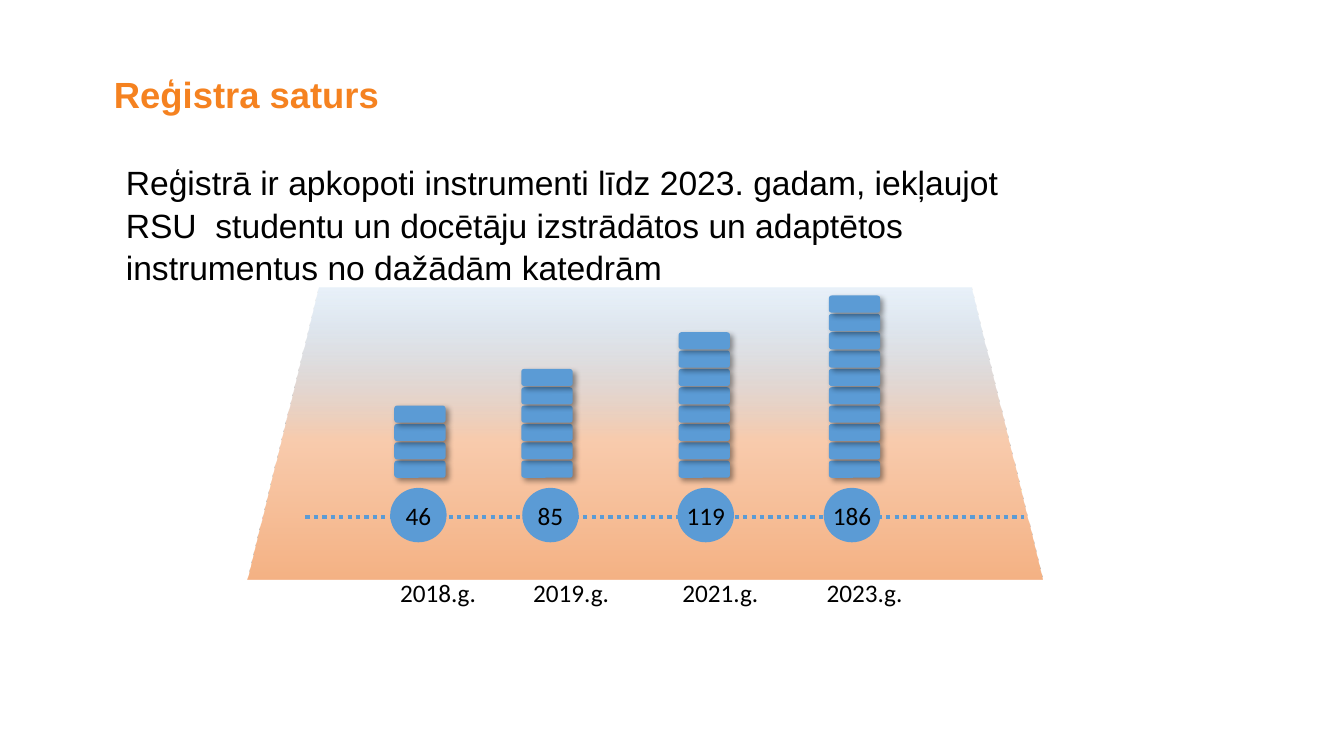
from dataclasses import dataclass

from lxml.etree import SubElement
from pptx import Presentation
from pptx.dml.color import RGBColor
from pptx.enum.dml import MSO_LINE
from pptx.enum.shapes import MSO_CONNECTOR, MSO_SHAPE
from pptx.enum.text import MSO_ANCHOR, PP_ALIGN
from pptx.oxml import parse_xml
from pptx.oxml.ns import nsdecls, qn
from pptx.util import Inches, Pt

ORANGE = RGBColor(0xF5, 0x82, 0x20)
BLUE = RGBColor(0x5B, 0x9B, 0xD5)
BLACK = RGBColor(0x00, 0x00, 0x00)
DEEP_PEACH = RGBColor(0xF4, 0xB1, 0x83)
PEACH = RGBColor(0xF8, 0xCB, 0xAD)
SKY = RGBColor(0x9D, 0xC3, 0xE6)

CELL = Inches(0.1)
COIN_PITCH = 1.82


@dataclass
class Box:
    left: float
    top: float
    width: float
    height: float

    def inner(self, left, top, width, height):
        return Box(self.left + left, self.top + top, width, height)

    def lengths(self):
        return [round(cells * CELL) for cells in (self.left, self.top, self.width, self.height)]


@dataclass
class Period:
    year: str
    total: str
    coins: int
    circle_left: float
    coin_left: float
    year_left: float


PERIODS = [
    Period("2018.g.", "46", 4, 14.2, 14.6, 14.2),
    Period("2019.g.", "85", 6, 27.3, 27.2, 27.4),
    Period("2021.g.", "119", 8, 42.7, 42.8, 42.2),
    Period("2023.g.", "186", 10, 57.2, 57.7, 56.5),
]


def write(shape, text, font="Arial", size=18, color=BLACK, bold=False, align=PP_ALIGN.LEFT,
          anchor=MSO_ANCHOR.TOP, spacing=1.0, margin=None, wrap=True, tabs=()):
    frame = shape.text_frame
    frame.word_wrap = wrap
    frame.vertical_anchor = anchor
    if margin is not None:
        frame.margin_left = frame.margin_right = margin
        frame.margin_top = frame.margin_bottom = margin
    paragraph = frame.paragraphs[0]
    paragraph.alignment = align
    paragraph.line_spacing = spacing
    if tabs:
        tab_list = SubElement(paragraph._p.get_or_add_pPr(), qn("a:tabLst"))
        for tab in tabs:
            SubElement(tab_list, qn("a:tab"), pos=str(round(tab * CELL)), algn="l")
    run = paragraph.add_run()
    run.text = text
    run.font.name = font
    run.font.size = Pt(size)
    run.font.bold = bold
    run.font.color.rgb = color


def add_plain_shape(slide, kind, box, fill=BLUE):
    shape = slide.shapes.add_shape(kind, *box.lengths())
    shape.shadow.inherit = False
    shape.fill.solid()
    shape.fill.fore_color.rgb = fill
    shape.line.fill.background()
    return shape


def add_title(slide, box):
    title = slide.shapes.title
    title.left, title.top, title.width, title.height = box.lengths()
    write(title, "Reģistra saturs", size=26, color=ORANGE, bold=True, spacing=0.9, margin=0)


def add_summary(slide, box):
    write(slide.shapes.add_textbox(*box.lengths()),
          "Reģistrā ir apkopoti instrumenti līdz 2023. gadam, iekļaujot RSU  studentu un docētāju "
          "izstrādātos un adaptētos instrumentus no dažādām katedrām", size=24, spacing=1.05)


def add_backdrop(slide, box):
    backdrop = add_plain_shape(slide, MSO_SHAPE.TRAPEZOID, box, PEACH)
    backdrop.adjustments[0] = 0.245
    solid = backdrop._element.spPr.find(qn("a:solidFill"))
    solid.getparent().replace(solid, parse_xml(
        f'<a:gradFill {nsdecls("a")} rotWithShape="1"><a:gsLst>'
        f'<a:gs pos="0"><a:srgbClr val="{DEEP_PEACH}"/></a:gs>'
        f'<a:gs pos="48000"><a:srgbClr val="{PEACH}"/></a:gs>'
        f'<a:gs pos="100000"><a:srgbClr val="{SKY}"><a:alpha val="22000"/></a:srgbClr></a:gs>'
        '</a:gsLst><a:lin ang="16200000" scaled="0"/></a:gradFill>'))


def add_timeline(slide, box):
    left, top, width, _ = box.lengths()
    line = slide.shapes.add_connector(MSO_CONNECTOR.STRAIGHT, left, top, left + width, top)
    line.line.color.rgb = BLUE
    line.line.width = Pt(3)
    line.line.dash_style = MSO_LINE.ROUND_DOT
    SubElement(line._element.spPr, qn("a:effectLst"))


def add_coin(slide, box):
    coin = add_plain_shape(slide, MSO_SHAPE.ROUNDED_RECTANGLE, box)
    effects = coin._element.spPr.find(qn("a:effectLst"))
    shadow = SubElement(effects, qn("a:outerShdw"), blurRad=str(Pt(4)), dist=str(Pt(3)),
                        dir="2700000", algn="tl", rotWithShape="0")
    color = SubElement(shadow, qn("a:srgbClr"), val=str(BLACK))
    SubElement(color, qn("a:alpha"), val="40000")


def add_period(slide, box, period):
    circle = add_plain_shape(slide, MSO_SHAPE.OVAL, box.inner(period.circle_left, 19.9, 5.6, 5.4))
    write(circle, period.total, font="Calibri", align=PP_ALIGN.CENTER,
          anchor=MSO_ANCHOR.MIDDLE, margin=0, wrap=False)
    for level in range(period.coins):
        add_coin(slide, box.inner(period.coin_left, 17.2 - level * COIN_PITCH, 5.1, 1.7))


def add_growth_diagram(slide, box):
    add_backdrop(slide, box)
    add_timeline(slide, box.inner(5.8, 22.8, 71.3, 0))
    for period in PERIODS:
        add_period(slide, box, period)
    first = PERIODS[0].year_left
    years = slide.shapes.add_textbox(*box.inner(first, 28.3, 61, 4).lengths())
    write(years, "\t".join(period.year for period in PERIODS), font="Calibri",
          tabs=[period.year_left - first for period in PERIODS[1:]])


def main():
    presentation = Presentation()
    presentation.slide_width = Inches(13.33)
    presentation.slide_height = Inches(7.5)
    slide = presentation.slides.add_slide(presentation.slide_layouts[5])
    add_title(slide, Box(11.3, 7.6, 110.4, 11.3))
    add_growth_diagram(slide, Box(24.5, 28.5, 78.9, 29))
    add_summary(slide, Box(11.5, 15.4, 93.4, 13.1))
    presentation.save("out.pptx")


if __name__ == "__main__":
    main()
